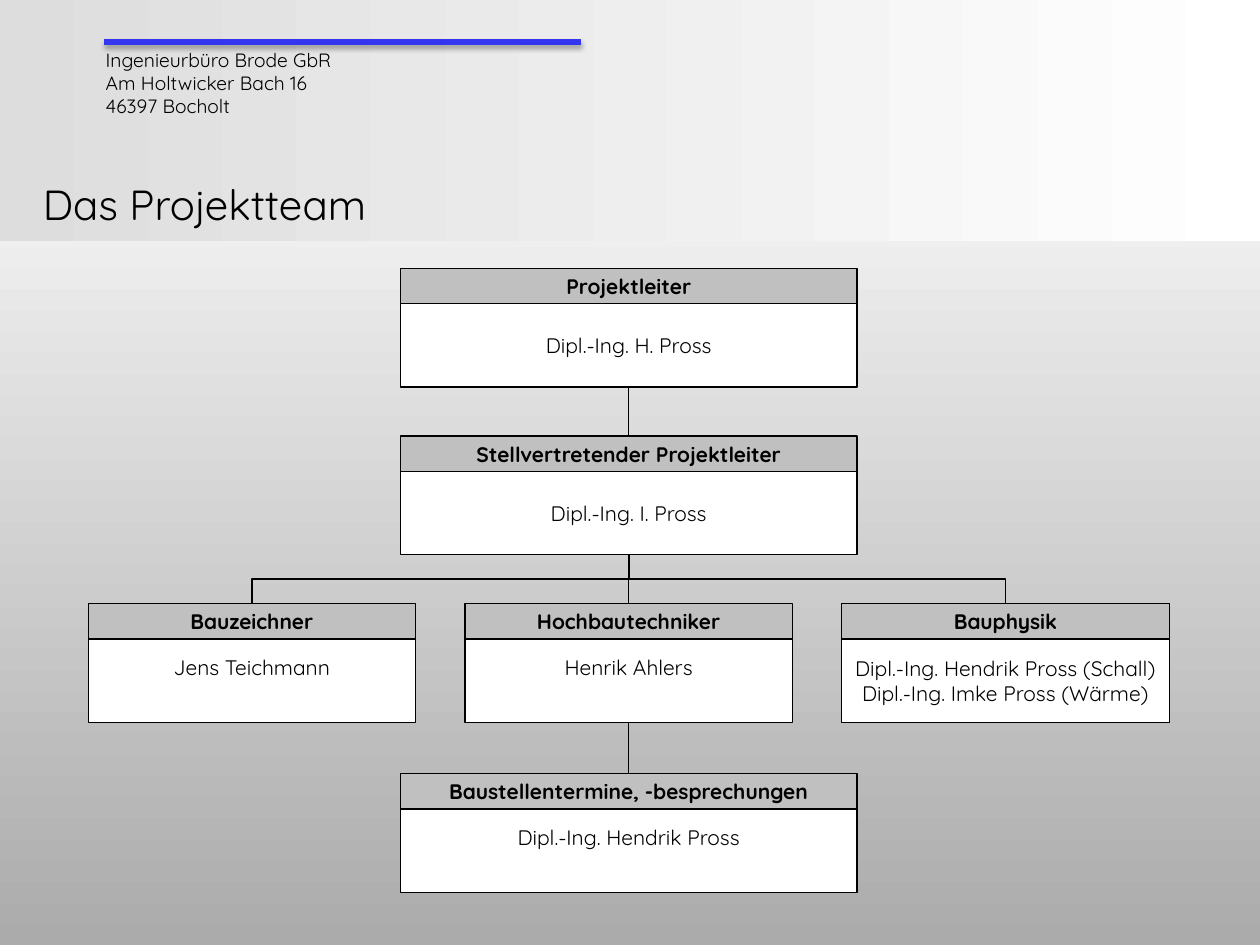
from lxml import etree
from pptx import Presentation
from pptx.dml.color import RGBColor
from pptx.enum.shapes import MSO_CONNECTOR, MSO_SHAPE
from pptx.enum.text import MSO_ANCHOR, MSO_AUTO_SIZE, PP_ALIGN
from pptx.oxml import parse_xml
from pptx.oxml.ns import nsdecls, qn
from pptx.util import Pt

BLACK = RGBColor(0x00, 0x00, 0x00)
WHITE = RGBColor(0xFF, 0xFF, 0xFF)
SILVER = RGBColor(0xC0, 0xC0, 0xC0)
BAND_GRAY = RGBColor(0xDD, 0xDD, 0xDD)
FLOOR_GRAY = RGBColor(0xAB, 0xAB, 0xAB)
BLUE = RGBColor(0x33, 0x35, 0xEF)

PAGE_WIDTH, PAGE_HEIGHT = 720, 540
CENTER = 359.3
COLUMN_STEP = 215.3
COLUMNS = [CENTER + COLUMN_STEP * side for side in (-1, 0, 1)]
LEVELS = [153.4, 249.1, 344.9, 442.1]
WIDE, NARROW = 261, 187.2
HEAD_HEIGHT, BODY_HEIGHT = 20.2, 47.6
CARD_HEIGHT = HEAD_HEIGHT + BODY_HEIGHT
LINE_HEIGHT = 15

LINE_SHADOW = (
    f'<a:effectLst {nsdecls("a")}>'
    '<a:outerShdw blurRad="39370" dist="22860" dir="5400000" rotWithShape="0">'
    '<a:srgbClr val="000000"><a:alpha val="35000"/></a:srgbClr>'
    '</a:outerShdw></a:effectLst>'
)

# center, level, width, role, names, lines kept free below the names
CARDS = [
    (CENTER, 0, WIDE, "Projektleiter", ["Dipl.-Ing. H. Pross"], 0),
    (CENTER, 1, WIDE, "Stellvertretender Projektleiter", ["Dipl.-Ing. I. Pross"], 0),
    (COLUMNS[0], 2, NARROW, "Bauzeichner", ["Jens Teichmann"], 1),
    (COLUMNS[1], 2, NARROW, "Hochbautechniker", ["Henrik Ahlers"], 1),
    (COLUMNS[2], 2, NARROW, "Bauphysik",
     ["Dipl.-Ing. Hendrik Pross (Schall)", "Dipl.-Ing. Imke Pross (Wärme)"], 0),
    (CENTER, 3, WIDE, "Baustellentermine, -besprechungen",
     ["Dipl.-Ing. Hendrik Pross"], 1),
]


class OrgChart:
    """Holds the text style and the page being drawn; lengths are in points."""

    style = {"name": "Quicksand", "size": Pt(12), "bold": False}

    def __init__(self, page):
        self.page = page

    def gradient(self, fill, start, end, angle, end_position=1.0):
        fill.gradient()
        fill.gradient_angle = angle
        stops = zip(fill.gradient_stops, (start, end), (0.0, end_position))
        for stop, color, position in stops:
            stop.color.rgb = color
            stop.position = position

    def fill_text(self, frame, lines, align=PP_ALIGN.LEFT, **changes):
        frame.text = "\n".join(lines)
        for para in frame.paragraphs:
            para.alignment = align
            for span in para.runs:
                for name, value in {**self.style, **changes}.items():
                    setattr(span.font, name, value)
                span.font.color.rgb = BLACK

    def title(self, text, left, top, width, height):
        box = self.page.shapes.title
        place = {"left": left, "top": top, "width": width, "height": height}
        for name, value in place.items():
            setattr(box, name, Pt(value))
        frame = box.text_frame
        frame.auto_size = MSO_AUTO_SIZE.NONE
        frame.vertical_anchor = MSO_ANCHOR.MIDDLE
        self.fill_text(frame, [text], size=Pt(24))
        self.page.shapes._spTree.append(box._element)  # in front of the band

    def text(self, lines, left, top, width, height, **changes):
        box = self.page.shapes.add_textbox(Pt(left), Pt(top), Pt(width), Pt(height))
        box.text_frame.word_wrap = True
        box.text_frame.auto_size = MSO_AUTO_SIZE.SHAPE_TO_FIT_TEXT
        self.fill_text(box.text_frame, lines, **changes)

    def rectangle(self, left, top, width, height):
        box = self.page.shapes.add_shape(
            MSO_SHAPE.RECTANGLE, Pt(left), Pt(top), Pt(width), Pt(height))
        box.shadow.inherit = False
        return box

    def band(self, height):
        box = self.rectangle(0, 0, PAGE_WIDTH, height)
        self.gradient(box.fill, BAND_GRAY, WHITE, 0)
        box.line.fill.background()

    def cell(self, left, top, width, height, color, lines, free_lines=0, bold=False):
        box = self.rectangle(left, top, width, height)
        box.fill.solid()
        box.fill.fore_color.rgb = color
        box.line.color.rgb = BLACK
        box.line.width = Pt(0.75)
        frame = box.text_frame
        frame.word_wrap = False
        frame.vertical_anchor = MSO_ANCHOR.MIDDLE
        frame.margin_bottom = Pt(3.6 + free_lines * LINE_HEIGHT)
        self.fill_text(frame, lines, PP_ALIGN.CENTER, bold=bold)

    def card(self, center, level, width, role, names, free_lines):
        left, top = center - width / 2, LEVELS[level]
        self.cell(left, top + HEAD_HEIGHT, width, BODY_HEIGHT, WHITE, names, free_lines)
        self.cell(left, top, width, HEAD_HEIGHT, SILVER, [role], bold=True)

    def line(self, start, end, color=BLACK, width=0.75,
             kind=MSO_CONNECTOR.STRAIGHT, shadowed=False):
        link = self.page.shapes.add_connector(
            kind, *(Pt(value) for value in (*start, *end)))
        link.line.color.rgb = color
        link.line.width = Pt(width)
        properties = link._element.spPr
        if shadowed:
            properties.append(parse_xml(LINE_SHADOW))
        else:
            etree.SubElement(properties, qn("a:effectLst"))
        return link

    def branch(self, start, end):
        """Elbow that leaves downwards, runs sideways and arrives downwards."""
        (x1, y1), (x2, y2) = start, end
        middle_x, middle_y = (x1 + x2) / 2, (y1 + y2) / 2
        half_width, half_height = (y2 - y1) / 2, abs(x2 - x1) / 2
        quarter_turns = 1
        if x2 > x1:
            half_width, quarter_turns = -half_width, 3  # mirrored
        link = self.line((middle_x - half_width, middle_y - half_height),
                         (middle_x + half_width, middle_y + half_height),
                         kind=MSO_CONNECTOR.ELBOW)
        link._element.spPr.find(qn("a:xfrm")).set("rot", str(quarter_turns * 5400000))


def main():
    deck = Presentation()
    deck.slide_width, deck.slide_height = Pt(PAGE_WIDTH), Pt(PAGE_HEIGHT)
    page = deck.slides.add_slide(deck.slide_layouts[5])
    chart = OrgChart(page)
    chart.gradient(page.background.fill, FLOOR_GRAY, WHITE, 90, 0.94)

    chart.band(138)
    chart.line((59.5, 24), (332, 24), BLUE, 3, shadowed=True)
    chart.text(["Ingenieurbüro Brode GbR", "Am Holtwicker Bach 16", "46397 Bocholt"],
               53.3, 23.8, 153.4, 47.5, size=Pt(11))
    chart.title("Das Projektteam", 17.3, 99.4, 658, 33.8)

    fork = (CENTER, LEVELS[1] + CARD_HEIGHT)
    for column in (COLUMNS[2], COLUMNS[0]):
        chart.branch(fork, (column, LEVELS[2]))
    for upper, lower in zip(LEVELS, LEVELS[1:]):
        chart.line((CENTER, upper + CARD_HEIGHT), (CENTER, lower))
    for card in CARDS:
        chart.card(*card)

    deck.save("out.pptx")


if __name__ == "__main__":
    main()
